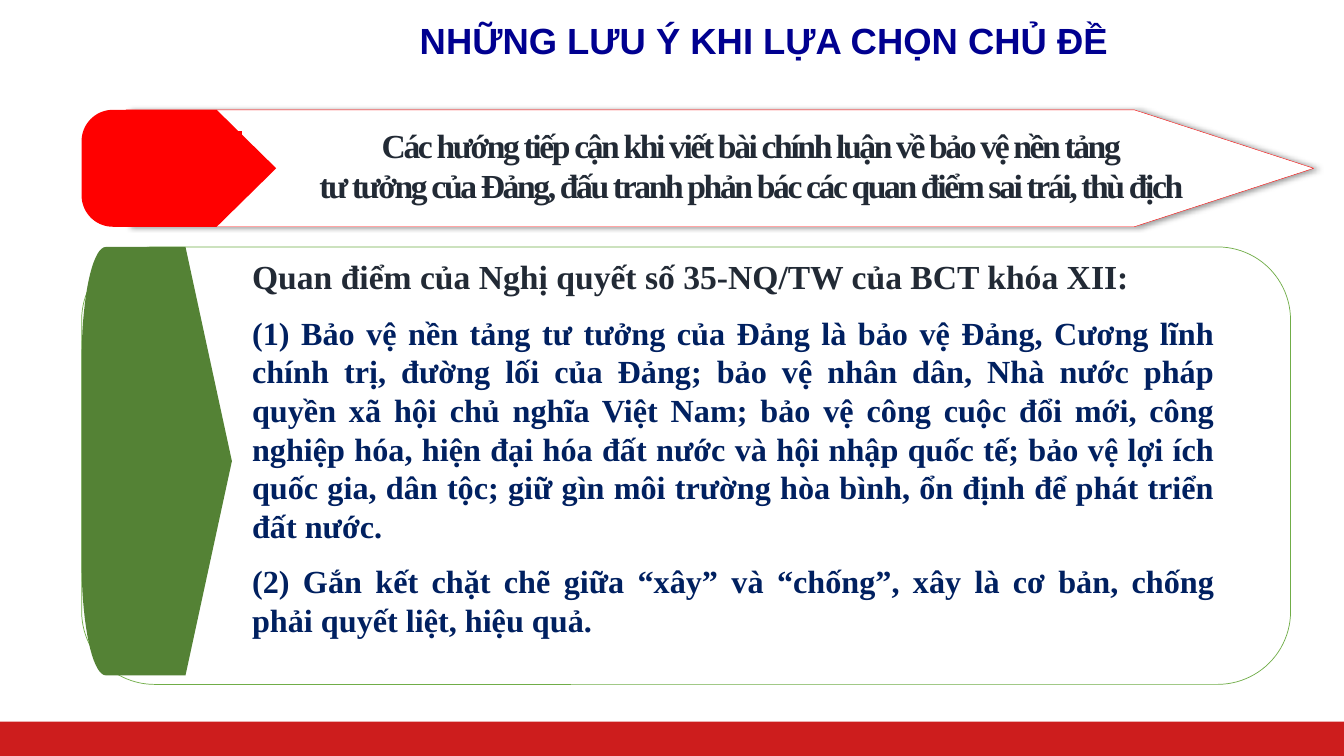
import math

from lxml import etree
from pptx import Presentation
from pptx import util as u
from pptx.dml.color import RGBColor
from pptx.enum import shapes, text
from pptx.oxml.ns import qn

PX = 9144  # EMU per px, 100 px to the inch
SERIF = "Times New Roman"
COLORS = {
    "white": "FFFFFF", "red": "FF0000", "green": "548235", "frame": "70AD47",
    "footer": "CD1D1D", "ink": "222A35", "navy": "002060", "title": "000090",
    "shadow": "000000",
}
RESOLUTION = [
    ("Quan điểm của Nghị quyết số 35-NQ/TW của BCT khóa XII:", 24, "ink"),
    ("(1) Bảo vệ nền tảng tư tưởng của Đảng là bảo vệ Đảng, Cương lĩnh chính trị, "
     "đường lối của Đảng; bảo vệ nhân dân, Nhà nước pháp quyền xã hội chủ nghĩa "
     "Việt Nam; bảo vệ công cuộc đổi mới, công nghiệp hóa, hiện đại hóa đất nước và "
     "hội nhập quốc tế; bảo vệ lợi ích quốc gia, dân tộc; giữ gìn môi trường hòa "
     "bình, ổn định để phát triển đất nước.", 23, "navy"),
    ("(2) Gắn kết chặt chẽ giữa “xây” và “chống”, xây là cơ bản, chống phải quyết "
     "liệt, hiệu quả.", 23, "navy"),
]
APPROACHES = [
    "Các hướng tiếp cận khi viết bài chính luận về bảo vệ nền tảng",
    "tư tưởng của Đảng, đấu tranh phản bác các quan điểm sai trái, thù địch",
]


def rgb(color):
    return RGBColor.from_string(COLORS[color])


def paint(shape, fill, line=None, width=0.5):
    shape.shadow.inherit = False
    shape.fill.solid()
    shape.fill.fore_color.rgb = rgb(fill)
    if line:
        shape.line.color.rgb = rgb(line)
        shape.line.width = u.Pt(width)
    else:
        shape.line.fill.background()
    return shape


def place(shape, box):
    shape.left, shape.top, shape.width, shape.height = (v * PX for v in box)


def add_preset(slide, preset, box, fill, line=None):
    shape = slide.shapes.add_shape(preset, *(v * PX for v in box))
    return paint(shape, fill, line)


def add_outline(slide, points, fill, line=None, width=0.5):
    builder = slide.shapes.build_freeform(
        round(points[0][0] * PX), round(points[0][1] * PX), scale=1.0)
    builder.add_line_segments([(round(x * PX), round(y * PX)) for x, y in points[1:]])
    return paint(builder.convert_to_shape(), fill, line, width)


def add_run(paragraph, words, size, color, font=SERIF):
    run = paragraph.add_run()
    run.text = words
    run.font.size, run.font.bold, run.font.name = u.Pt(size), True, font
    run.font.color.rgb = rgb(color)
    return run


def paragraphs(frame, count):
    return [frame.paragraphs[0]] + [frame.add_paragraph() for _ in range(count - 1)]


def add_tab(slide, box, corner, point, color):
    """Draw a pentagon tab: left corners rounded by an ellipse, right side pointed."""
    left, top, width, height = box
    radius_x, radius_y = corner
    right, bottom = left + width, top + height
    angles = [math.radians(a) for a in range(0, 91, 5)]
    upper = [(left + radius_x * (1 - math.cos(a)), top + radius_y * (1 - math.sin(a)))
             for a in angles]
    lower = [(x, top + bottom - y) for x, y in reversed(upper)]
    nose = [(right - point, top), (right, top + height / 2), (right - point, bottom)]
    add_outline(slide, upper + nose + lower, color)


def add_soft_shadow(shape):
    effects = shape._element.spPr.find(qn("a:effectLst"))
    shadow = etree.SubElement(effects, qn("a:outerShdw"), blurRad=str(u.Pt(4)),
                              dist=str(u.Pt(3)), dir="0", algn="l", rotWithShape="0")
    tint = etree.SubElement(shadow, qn("a:srgbClr"), val=COLORS["shadow"])
    etree.SubElement(tint, qn("a:alpha"), val="40000")


def add_title(slide, box):
    title = slide.shapes.title
    place(title, box)
    frame = title.text_frame
    frame.vertical_anchor = text.MSO_ANCHOR.MIDDLE
    frame.auto_size = text.MSO_AUTO_SIZE.NONE
    heading = frame.paragraphs[0]
    heading.alignment, heading.line_spacing = text.PP_ALIGN.CENTER, 0.9
    add_run(heading, "NHỮNG LƯU Ý KHI LỰA CHỌN CHỦ ĐỀ", 26, "title", "Arial")


def add_resolution_panel(slide, box):
    left, top, width, height = box
    add_preset(slide, shapes.MSO_SHAPE.ROUNDED_RECTANGLE, box, "white", "frame")
    add_tab(slide, (left, top, 149, height - 9), (24, 112), 46, "green")

    body = slide.placeholders[1]
    slide.shapes._spTree.append(body._element)  # bring in front of the panel
    place(body, (left + 159, top + 4, width - 223, height - 40))
    frame = body.text_frame
    frame.vertical_anchor = text.MSO_ANCHOR.TOP
    frame.auto_size = text.MSO_AUTO_SIZE.NONE
    lines = paragraphs(frame, len(RESOLUTION))
    for index, (line, content) in enumerate(zip(lines, RESOLUTION)):
        props = line._p.get_or_add_pPr()
        props.set("marL", "0")
        props.set("indent", "0")
        etree.SubElement(props, qn("a:buNone"))
        line.alignment = text.PP_ALIGN.JUSTIFY
        line.space_before = u.Pt(6 if index else 0)
        line.space_after = u.Pt(6)
        add_run(line, *content)


def add_approach_banner(slide, box):
    left, top, width, height = box
    right, bottom = left + width, top + height
    start, shoulder = left + 44, right - 178
    arrow = add_outline(
        slide,
        [(start, top), (shoulder, top), (right, top + height / 2),
         (shoulder, bottom), (start, bottom)],
        "white", "red", 0.25)
    add_soft_shadow(arrow)
    add_tab(slide, (left, top, 193, height), (31, 31), 59, "red")
    add_preset(slide, shapes.MSO_SHAPE.RECTANGLE,
               (left + 71, top + 21, 88, 54), "red")

    caption = slide.shapes.add_textbox(
        *(v * PX for v in (left + 193, top + 9, width - 280, 91)))
    frame = caption.text_frame
    frame.word_wrap = True
    frame.vertical_anchor = text.MSO_ANCHOR.MIDDLE
    for line, words in zip(paragraphs(frame, len(APPROACHES)), APPROACHES):
        line.alignment = text.PP_ALIGN.CENTER
        run = add_run(line, words, 24, "ink")
        run._r.get_or_add_rPr().set("spc", "-170")


def main():
    deck = Presentation()
    deck.slide_width, deck.slide_height = 1333 * PX, 750 * PX
    slide = deck.slides.add_slide(deck.slide_layouts[1])
    add_preset(slide, shapes.MSO_SHAPE.RECTANGLE, (0, 716, 1333, 34), "footer")
    add_resolution_panel(slide, (81, 245, 1199, 434))
    add_approach_banner(slide, (81, 109, 1222, 116))
    add_title(slide, (188, 0, 1140, 85))
    deck.save("out.pptx")


if __name__ == "__main__":
    main()
